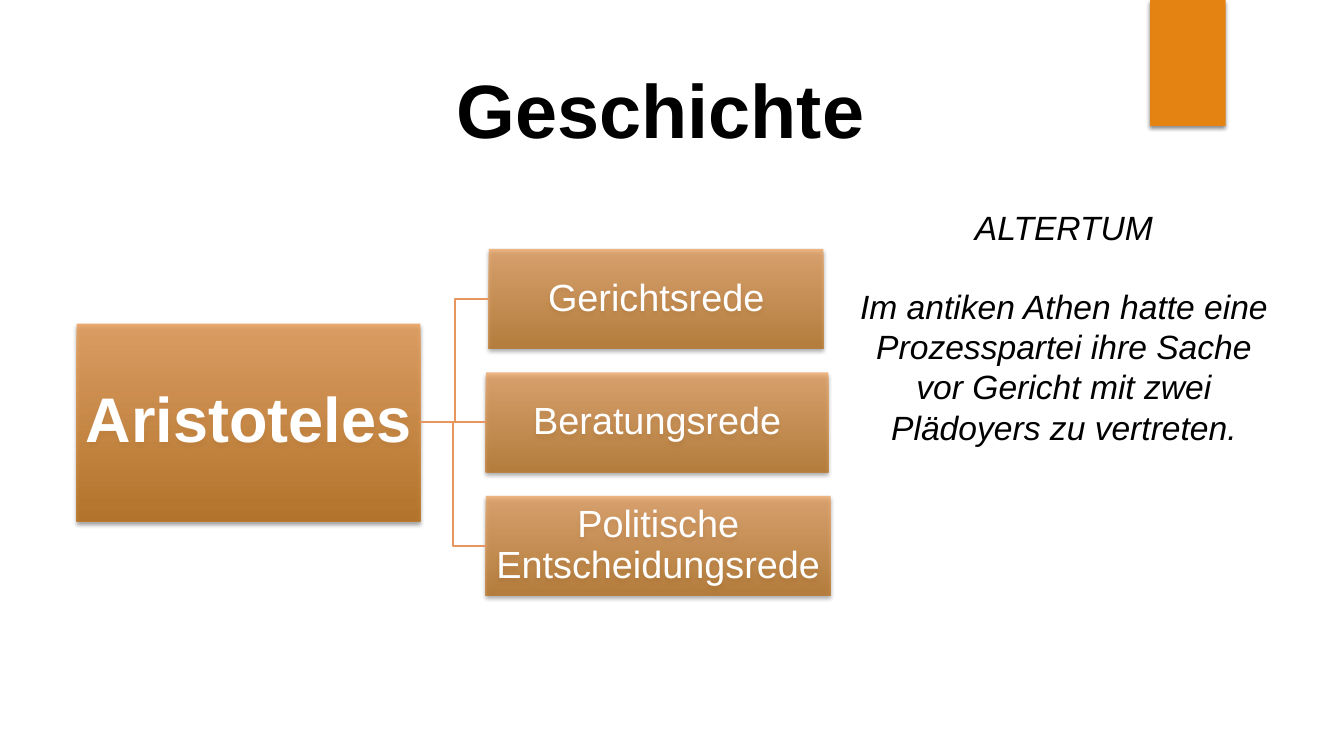
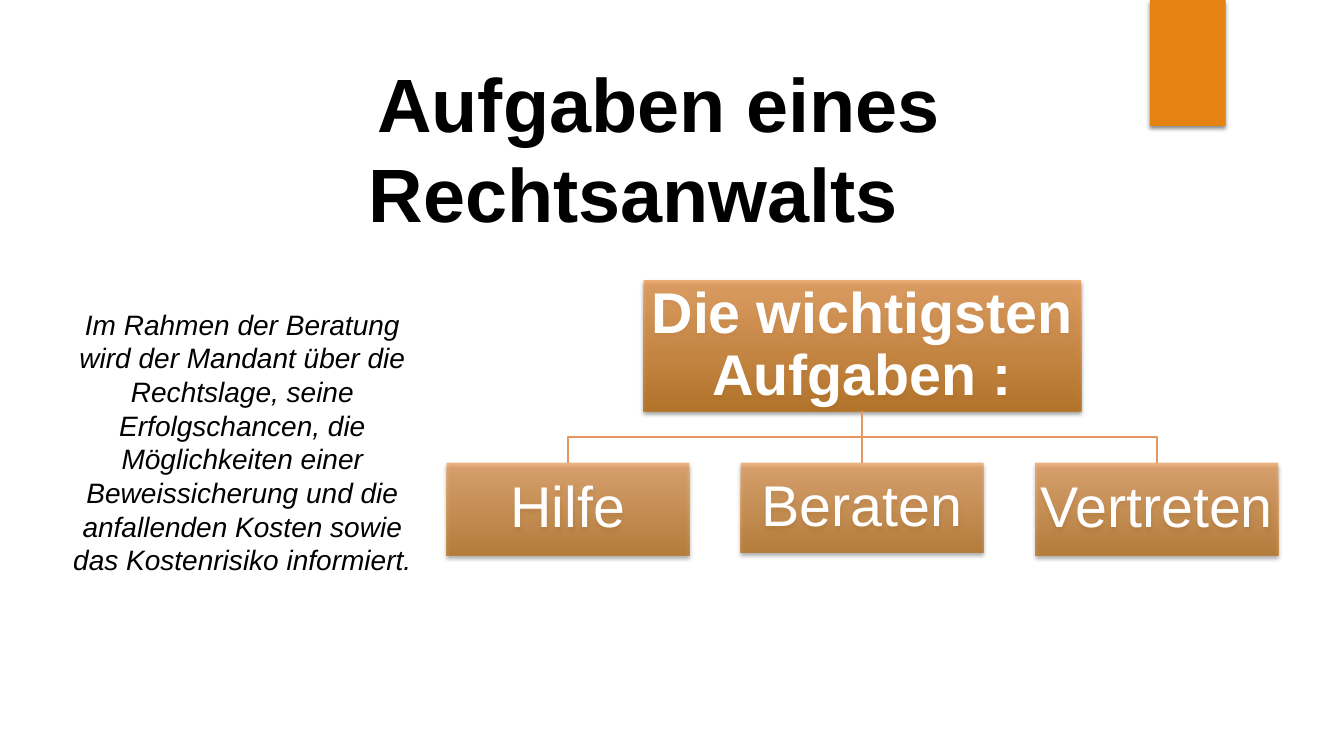
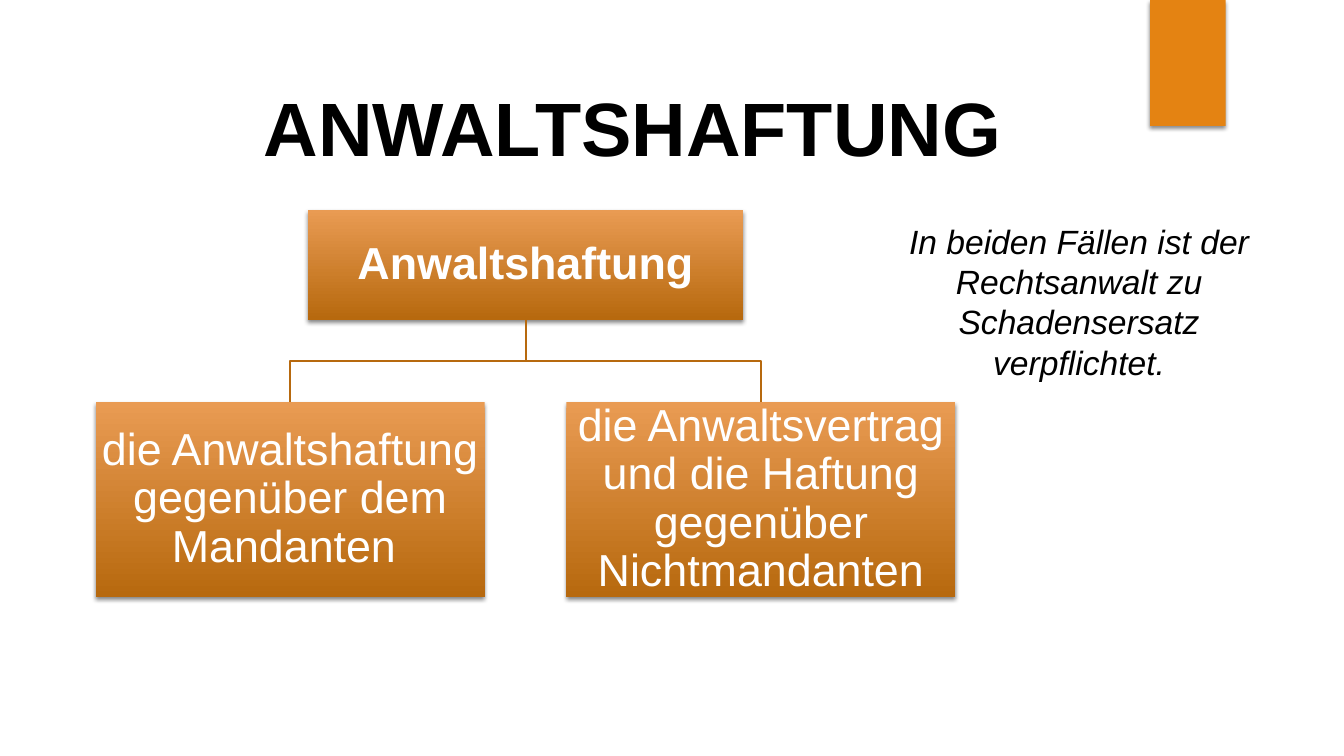
from dataclasses import dataclass

from lxml.etree import SubElement
from pptx import Presentation
from pptx.dml.color import RGBColor
from pptx.enum.shapes import MSO_CONNECTOR, MSO_SHAPE
from pptx.enum.text import MSO_ANCHOR as Anchor, MSO_AUTO_SIZE as AutoSize, PP_ALIGN
from pptx.oxml.ns import qn
from pptx.util import Emu, Inches, Pt

COLUMNS, ROWS = 80, 45
CELL = Inches(1) / 6
FONT = "Arial"
COLORS = {
    "band": "E48312",
    "light": "E99B53",
    "dark": "B7690E",
    "branch": "E7965F",
    "black": "000000",
    "white": "FFFFFF",
}
TOP, LEFT, BOTTOM, RIGHT = range(4)


@dataclass
class Box:
    """A rectangle measured in grid cells."""
    x: float
    y: float
    w: float
    h: float

    def inner(self, x, y, w, h):
        """Return a box whose place is relative to this one."""
        return Box(self.x + x, self.y + y, w, h)

    def emu(self):
        """Return left, top, width and height as lengths."""
        return [Emu(round(side * CELL)) for side in (self.x, self.y, self.w, self.h)]

    def center(self):
        """Return the middle point."""
        return self.x + self.w / 2, self.y + self.h / 2


def rgb(name):
    """Look up a colour of the palette."""
    return RGBColor.from_string(COLORS[name])


def write(frame, *texts, size, color="black", bold=False, italic=False,
          anchor=Anchor.TOP, fit=AutoSize.NONE, inset=None, spacing=None, gap=0):
    """Fill a text frame with centred paragraphs."""
    frame.word_wrap = True
    frame.auto_size = fit
    frame.vertical_anchor = anchor
    if inset is not None:
        frame.margin_left = frame.margin_right = Inches(inset)
        frame.margin_top = frame.margin_bottom = Inches(inset)
    for index, text in enumerate(texts):
        paragraph = frame.add_paragraph() if index else frame.paragraphs[0]
        paragraph.alignment = PP_ALIGN.CENTER
        paragraph.line_spacing = spacing
        paragraph.space_before = Pt(gap if index else 0)
        run = paragraph.add_run()
        run.text = text
        run.font.name = FONT
        run.font.size = Pt(size)
        run.font.bold = bold
        run.font.italic = italic
        run.font.color.rgb = rgb(color)


def cast_shadow(shape):
    """Put a soft shadow below a shape."""
    shape.shadow.inherit = False
    effects = shape.element.spPr.find(qn("a:effectLst"))
    shadow = SubElement(effects, qn("a:outerShdw"), blurRad=str(Pt(3)), dist=str(Pt(2)),
                        dir="5400000", algn="ctr", rotWithShape="0")
    black = SubElement(shadow, qn("a:srgbClr"), val=COLORS["black"])
    SubElement(black, qn("a:alpha"), val="45000")


def add_card(slide, box, text, size, opacity=100, bold=False):
    """Draw a gradient card with its text."""
    card = slide.shapes.add_shape(MSO_SHAPE.RECTANGLE, *box.emu())
    card.fill.gradient()
    card.fill.gradient_angle = 270
    for stop, name in zip(card.fill.gradient_stops, ("light", "dark")):
        stop.color.rgb = rgb(name)
    if opacity < 100:
        for tone in card.element.spPr.iter(qn("a:srgbClr")):
            SubElement(tone, qn("a:alpha"), val=str(opacity * 1000))
    card.line.fill.background()
    cast_shadow(card)
    write(card.text_frame, text, size=size, color="white", bold=bold,
          anchor=Anchor.MIDDLE, inset=0.03, spacing=0.9)
    return card


def add_elbow(slide, points, color):
    """Draw an open line through points of the grid."""
    start, *rest = [(round(x * CELL), round(y * CELL)) for x, y in points]
    builder = slide.shapes.build_freeform(*start)
    builder.add_line_segments(rest, close=False)
    elbow = builder.convert_to_shape()
    elbow.fill.background()
    elbow.line.color.rgb = rgb(color)
    elbow.line.width = Pt(1.5)
    elbow.shadow.inherit = False


def add_link(slide, source, source_side, target, target_side, color):
    """Join two cards with a straight connector."""
    link = slide.shapes.add_connector(MSO_CONNECTOR.STRAIGHT, 0, 0, 0, 0)
    link.begin_connect(source, source_side)
    link.end_connect(target, target_side)
    link.line.color.rgb = rgb(color)
    link.line.width = Pt(1.5)
    SubElement(link.element.spPr, qn("a:effectLst"))


def add_sideways_tree(slide, box, root, branches, color):
    """Draw a root on the left and its branches stacked on the right."""
    root_width, root_height, branch_height = 20.46, 11.76, 5.94
    root_box = box.inner(0, (box.h - root_height) / 2, root_width, root_height)
    root_card = add_card(slide, root_box, root, 45, 80, bold=True)
    pitch = (box.h - branch_height) / (len(branches) - 1)
    start_x, start_y = box.x + root_width, root_box.center()[1]
    for row, (text, left, width) in enumerate(branches):
        branch_box = box.inner(left, row * pitch, width, branch_height)
        branch = add_card(slide, branch_box, text, 27, 70)
        end_y = branch_box.center()[1]
        if abs(end_y - start_y) < 0.01:
            add_link(slide, root_card, RIGHT, branch, LEFT, color)
        else:
            turn = (start_x + branch_box.x) / 2
            add_elbow(slide, [(start_x, start_y), (turn, start_y), (turn, end_y),
                              (branch_box.x, end_y)], color)


def add_hanging_tree(slide, box, root, leaves, root_size, leaf_size, font_size, color,
                     root_opacity=100, leaf_opacity=100):
    """Draw a root on top and its leaves spread evenly below."""
    root_width, root_height = root_size
    leaf_width, leaf_height = leaf_size
    root_box = box.inner((box.w - root_width) / 2, 0, root_width, root_height)
    root_card = add_card(slide, root_box, root, font_size, root_opacity, bold=True)
    pitch = (box.w - leaf_width) / (len(leaves) - 1)
    start_x, start_y = root_box.center()[0], box.y + root_height
    for column, (text, trim) in enumerate(leaves):
        leaf_box = box.inner(column * pitch, box.h - leaf_height, leaf_width, leaf_height - trim)
        leaf = add_card(slide, leaf_box, text, font_size, leaf_opacity)
        end_x = leaf_box.center()[0]
        if abs(end_x - start_x) < 0.01:
            add_link(slide, root_card, BOTTOM, leaf, TOP, color)
        else:
            turn = (start_y + leaf_box.y) / 2
            add_elbow(slide, [(start_x, start_y), (start_x, turn), (end_x, turn),
                              (end_x, leaf_box.y)], color)


def add_note(slide, box, *texts, size=24):
    """Place an italic remark beside a tree."""
    note = slide.shapes.add_textbox(*box.emu())
    write(note.text_frame, *texts, size=size, italic=True,
          fit=AutoSize.SHAPE_TO_FIT_TEXT, gap=27.6)


def add_titled_slide(deck, layout, box, title):
    """Add a slide with its bold title standing on the bottom of the box."""
    slide = deck.slides.add_slide(layout)
    heading = slide.shapes.title
    heading.left, heading.top, heading.width, heading.height = box.emu()
    write(heading.text_frame, title, size=54, bold=True, anchor=Anchor.BOTTOM)
    return slide


def add_band(slide, layout):
    """Move one orange band to the layout that all slides share."""
    band = slide.shapes.add_shape(MSO_SHAPE.RECTANGLE, *Box(68.46, 0, 4.5, 7.5).emu())
    band.fill.solid()
    band.fill.fore_color.rgb = rgb("band")
    band.line.fill.background()
    cast_shadow(band)
    layout.shapes.element.append(band.element)


def build_history(deck, layout):
    """Build the slide on the history."""
    slide = add_titled_slide(deck, layout, Box(10.38, 2.46, 57.9, 6.96), "Geschichte")
    add_band(slide, layout)
    add_sideways_tree(slide, Box(4.56, 14.82, 44.88, 20.64), "Aristoteles", [
        ("Gerichtsrede", 24.54, 19.92),
        ("Beratungsrede", 24.36, 20.4),
        ("Politische Entscheidungsrede", 24.36, 20.52),
    ], "branch")
    add_note(slide, Box(50.58, 12, 25.5, 15.12), "ALTERTUM",
             "Im antiken Athen hatte eine Prozesspartei ihre Sache vor Gericht "
             "mit zwei Plädoyers zu vertreten.")


def build_tasks(deck, layout):
    """Build the slide on the tasks of a lawyer."""
    slide = add_titled_slide(deck, layout, Box(8.76, 7.74, 57.9, 6.72),
                             "\tAufgaben eines Rechtsanwalts")
    add_hanging_tree(slide, Box(26.58, 16.68, 49.5, 16.38), "Die wichtigsten Aufgaben :",
                     [("Hilfe", 0), ("Beraten", 0.18), ("Vertreten", 0)],
                     (26.04, 7.8), (14.46, 5.52), 41, "branch", 80, 70)
    add_note(slide, Box(3.12, 18, 22.62, 16.74),
             "Im Rahmen der Beratung wird der Mandant über die Rechtslage, seine "
             "Erfolgschancen, die Möglichkeiten einer Beweissicherung und die anfallenden "
             "Kosten sowie das Kostenrisiko informiert.", size=20)


def build_liability(deck, layout):
    """Build the slide on the liability of a lawyer."""
    slide = add_titled_slide(deck, layout, Box(8.7, 4.86, 57.9, 5.64), "ANWALTSHAFTUNG")
    add_hanging_tree(slide, Box(5.7, 12.48, 51.18, 23.04), "Anwaltshaftung",
                     [("die Anwaltshaftung gegenüber dem Mandanten ", 0),
                      ("die Anwaltsvertrag und die Haftung gegenüber Nichtmandanten", 0)],
                     (25.92, 6.54), (23.16, 11.58), 32, "dark")
    add_note(slide, Box(52.08, 12.84, 24.3, 10.32),
             "In beiden Fällen ist der Rechtsanwalt zu Schadensersatz verpflichtet.")


def main():
    """Build and save the presentation."""
    deck = Presentation()
    deck.slide_width, deck.slide_height = Emu(round(COLUMNS * CELL)), Emu(round(ROWS * CELL))
    layout = deck.slide_layouts.get_by_name("Title Only")
    for build in (build_history, build_tasks, build_liability):
        build(deck, layout)
    deck.save("out.pptx")


if __name__ == "__main__":
    main()
